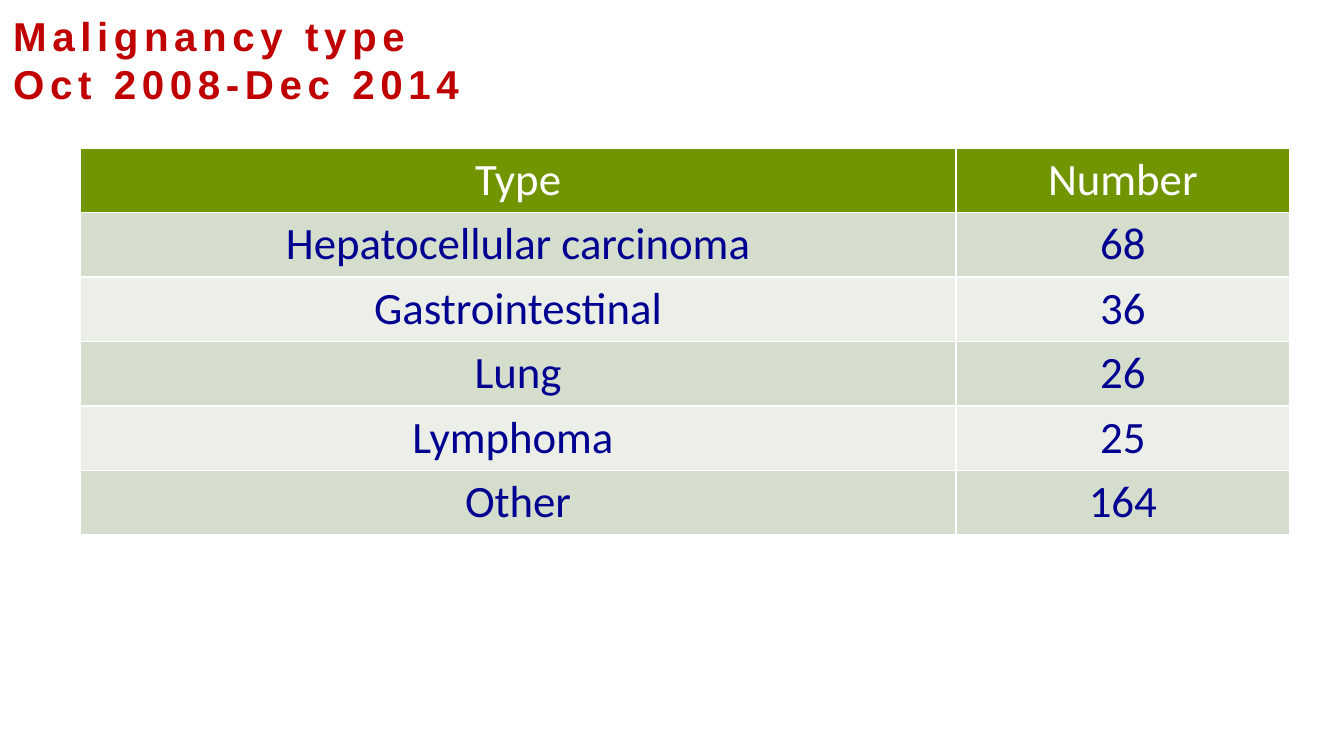
from lxml import etree
from pptx import Presentation
from pptx.dml.color import RGBColor
from pptx.enum.text import MSO_ANCHOR, PP_ALIGN
from pptx.oxml.ns import qn
from pptx.util import Pt

CENTER = PP_ALIGN.CENTER
LEFT = PP_ALIGN.LEFT
MIDDLE = MSO_ANCHOR.MIDDLE
PX = 4572
BLANK = 6


def px(length):
    return length * PX


def color(value):
    return RGBColor.from_string(value)


def write(frame, text, *, font, size, fill, align=LEFT, bold=False, tracking=0):
    paragraph = frame.paragraphs[0]
    paragraph.text = text
    paragraph.alignment = align
    for run in paragraph.runs:
        run.font.name = font
        run.font.size = Pt(size)
        run.font.bold = bold
        run.font.color.rgb = color(fill)
        if tracking:
            run._r.get_or_add_rPr().set("spc", str(tracking * 100))


class Deck:
    TITLE = dict(font="Arial", size=21.6, fill="C00000", bold=True, tracking=3)
    HEADER = dict(font="Calibri", size=24, fill="FFFFFF", align=CENTER)
    BODY = dict(HEADER, fill="000090")
    HEADER_FILL = "719500"
    BAND_FILLS = ("EBEFE7", "D5DDCC")
    RULE = "FFFFFF"

    def __init__(self, width, height):
        self.presentation = Presentation()
        self.presentation.slide_width = px(width)
        self.presentation.slide_height = px(height)
        self.slide = self.presentation.slides.add_slide(self.presentation.slide_layouts[BLANK])

    def title(self, text, left, top, width, height):
        box = self.slide.shapes.add_textbox(px(left), px(top), px(width), px(height))
        frame = box.text_frame
        frame.word_wrap = True
        frame.vertical_anchor = MIDDLE
        write(frame, text, **self.TITLE)

    def borders(self, cell):
        properties = cell._tc.get_or_add_tcPr()
        for side in "LRTB":
            line = etree.SubElement(properties, qn(f"a:ln{side}"), w=str(Pt(1)))
            solid = etree.SubElement(line, qn("a:solidFill"))
            etree.SubElement(solid, qn("a:srgbClr"), val=self.RULE)

    def table(self, records, left, top, column_widths, row_height):
        table = self.slide.shapes.add_table(
            len(records), len(column_widths), px(left), px(top),
            px(sum(column_widths)), px(row_height * len(records))).table
        for column, width in zip(table.columns, column_widths):
            column.width = px(width)
        for row_index, record in enumerate(records):
            is_header = row_index == 0
            band = self.HEADER_FILL if is_header else self.BAND_FILLS[row_index % 2]
            for column_index, value in enumerate(record):
                cell = table.cell(row_index, column_index)
                cell.margin_left = cell.margin_right = px(24)
                cell.margin_top = cell.margin_bottom = px(7)
                self.borders(cell)
                cell.fill.solid()
                cell.fill.fore_color.rgb = color(band)
                write(cell.text_frame, value, **(self.HEADER if is_header else self.BODY))

    def save(self):
        self.presentation.save("out.pptx")


def main():
    malignancies = [
        ("Type", "Number"),
        ("Hepatocellular carcinoma", "68"),
        ("Gastrointestinal", "36"),
        ("Lung", "26"),
        ("Lymphoma ", "25"),
        ("Other", "164"),
    ]
    deck = Deck(2000, 1125)
    deck.table(malignancies, 119, 220, (1304, 496), 96)
    deck.title("Malignancy type\vOct 2008-Dec 2014", 0, 0, 1800, 176)
    deck.save()


if __name__ == "__main__":
    main()
